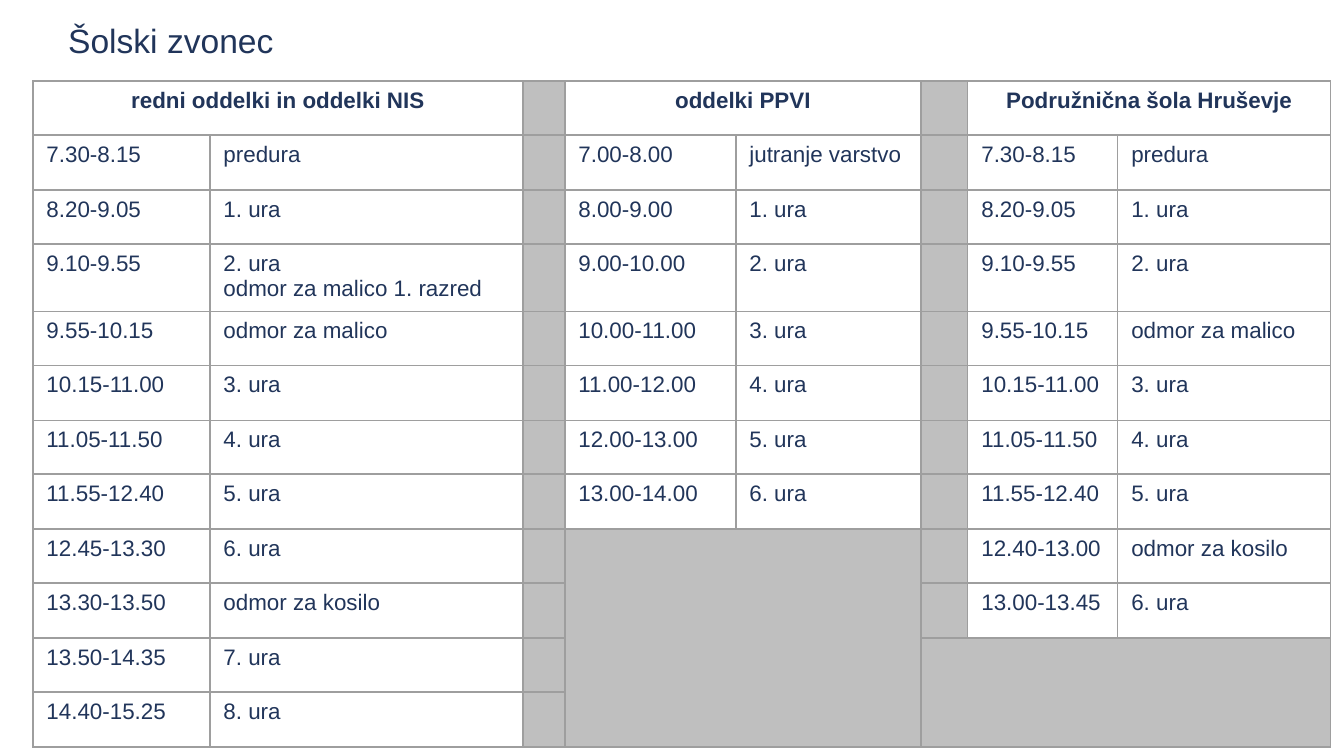
from dataclasses import dataclass

from lxml.etree import SubElement
from pptx import Presentation
from pptx.dml.color import RGBColor
from pptx.enum.text import PP_ALIGN
from pptx.oxml.ns import qn
from pptx.util import Emu, Pt

SCALE = 914400 / 134.4
NAVY, GREY, EDGE = "21355A", "BFBFBF", "9E9E9E"
COLS = [177, 313, 42, 171, 185, 47, 150, 213]
ROWS = [54, 55, 54, 64, 54, 55, 54, 55, 54, 55, 54, 55]


@dataclass
class Plan:
    col: int
    title: str
    hours: list[tuple[str, str]]


@dataclass
class Block:
    top: int
    left: int
    end: int
    right: int


PLANS = [
    Plan(0, "redni oddelki in oddelki NIS", [
        ("7.30-8.15", "predura"),
        ("8.20-9.05", "1. ura"),
        ("9.10-9.55", "2. ura\nodmor za malico 1. razred"),
        ("9.55-10.15", "odmor za malico"),
        ("10.15-11.00", "3. ura"),
        ("11.05-11.50", "4. ura"),
        ("11.55-12.40", "5. ura"),
        ("12.45-13.30", "6. ura"),
        ("13.30-13.50", "odmor za kosilo"),
        ("13.50-14.35", "7. ura"),
        ("14.40-15.25", "8. ura"),
    ]),
    Plan(3, "oddelki PPVI", [
        ("7.00-8.00", "jutranje varstvo"),
        ("8.00-9.00", "1. ura"),
        ("9.00-10.00", "2. ura"),
        ("10.00-11.00", "3. ura"),
        ("11.00-12.00", "4. ura"),
        ("12.00-13.00", "5. ura"),
        ("13.00-14.00", "6. ura"),
    ]),
    Plan(6, "Podružnična šola Hruševje", [
        ("7.30-8.15", "predura"),
        ("8.20-9.05", "1. ura"),
        ("9.10-9.55", "2. ura"),
        ("9.55-10.15", "odmor za malico"),
        ("10.15-11.00", "3. ura"),
        ("11.05-11.50", "4. ura"),
        ("11.55-12.40", "5. ura"),
        ("12.40-13.00", "odmor za kosilo"),
        ("13.00-13.45", "6. ura"),
    ]),
]
BLOCKS = [Block(0, plan.col, 0, plan.col + 1) for plan in PLANS]
BLOCKS += [Block(8, 3, 11, 4), Block(10, 5, 11, 7)]


def px(size: int) -> Emu:
    return Emu(round(size * SCALE))


def tint(code: str) -> RGBColor:
    return RGBColor.from_string(code)


def write(frame, text: str, size: int, bold: bool = False) -> None:
    frame.text = text
    looks = {"name": "Arial", "size": Pt(size), "bold": bold}
    for part in frame.paragraphs:
        part.alignment = PP_ALIGN.CENTER if bold else PP_ALIGN.LEFT
        for run in part.runs:
            for key, value in looks.items():
                setattr(run.font, key, value)
            run.font.color.rgb = tint(NAVY)


def border(cell) -> None:
    props = cell._tc.get_or_add_tcPr()
    for side in ("lnL", "lnR", "lnT", "lnB"):
        line = SubElement(props, qn(f"a:{side}"), w=str(Pt(0.75)))
        fill = SubElement(line, qn("a:solidFill"))
        SubElement(fill, qn("a:srgbClr"), val=EDGE)


def paint(cell, grey: bool) -> None:
    border(cell)
    if grey:
        cell.fill.solid()
        cell.fill.fore_color.rgb = tint(GREY)
    else:
        cell.fill.background()


def draw_title(slide) -> None:
    box = slide.shapes.add_textbox(px(55), px(13), px(1015), px(67))
    box.text_frame.word_wrap = True
    write(box.text_frame, "Šolski zvonec", 18)


def draw_table(slide) -> None:
    shape = slide.shapes.add_table(
        len(ROWS), len(COLS), px(33), px(81), px(sum(COLS)), px(sum(ROWS)))
    table = shape.table
    table.first_row = table.horz_banding = False
    for col, width in zip(table.columns, COLS):
        col.width = px(width)
    for row, height in zip(table.rows, ROWS):
        row.height = px(height)
    white = set()
    for plan in PLANS:
        write(table.cell(0, plan.col).text_frame, plan.title, 12, True)
        white |= {(0, plan.col), (0, plan.col + 1)}
        for row, pair in enumerate(plan.hours, 1):
            for col, text in enumerate(pair, plan.col):
                write(table.cell(row, col).text_frame, text, 12)
                white.add((row, col))
    for row in range(len(ROWS)):
        for col in range(len(COLS)):
            paint(table.cell(row, col), (row, col) not in white)
    for block in BLOCKS:
        last = table.cell(block.end, block.right)
        table.cell(block.top, block.left).merge(last)


def main() -> None:
    deck = Presentation()
    deck.slide_width, deck.slide_height = px(1344), px(756)
    slide = deck.slides.add_slide(deck.slide_layouts[6])
    draw_title(slide)
    draw_table(slide)
    deck.save("out.pptx")


if __name__ == "__main__":
    main()
